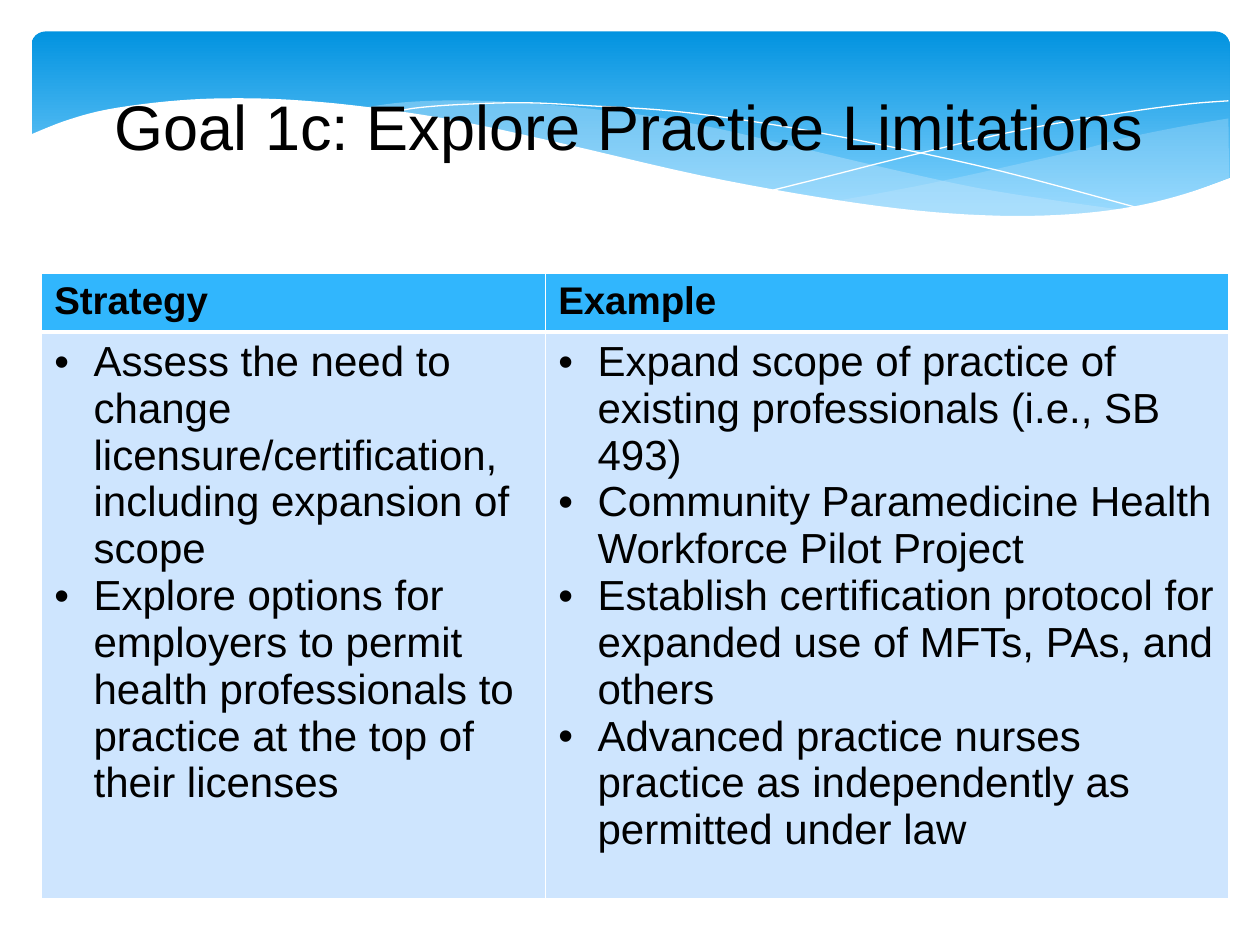
import pptx
import pptx.util
import pptx.dml.color
import pptx.enum.shapes
import pptx.enum.text
import pptx.oxml.ns
import lxml.etree

Pt = pptx.util.Pt
qn = pptx.oxml.ns.qn
sub = lxml.etree.SubElement


def paint(hue):
    return pptx.dml.color.RGBColor.from_string(hue)


def smooth(knots, steps=5):
    """Points on a Catmull-Rom curve that passes through the knots."""
    ring = [knots[0], *knots, knots[-1]]
    dots = [knots[0]]
    for a, b, c, d in zip(ring, ring[1:], ring[2:], ring[3:]):
        for k in range(1, steps + 1):
            t = k / steps
            dots.append(tuple(
                0.5 * (2 * q + (r - p) * t + (2 * p - 5 * q + 4 * r - s) * t ** 2
                       + (3 * q - p - 3 * r + s) * t ** 3)
                for p, q, r, s in zip(a, b, c, d)))
    return dots


deck = pptx.Presentation()
deck.slide_width, deck.slide_height = Pt(720), Pt(540)
slide = deck.slides.add_slide(deck.slide_layouts[6])
shapes = slide.shapes

# Blue banner
band = shapes.add_shape(pptx.enum.shapes.MSO_SHAPE.ROUNDED_RECTANGLE,
                        Pt(18), Pt(18), Pt(684.7), Pt(112.3))
band.adjustments[0] = 0.071
band.shadow.inherit = False
band.line.fill.background()
band.fill.gradient()
band.fill.gradient_angle = 270
for stop, hue, place in zip(band.fill.gradient_stops, ("0293E0", "83D3FE"), (0, 0.9)):
    stop.color.rgb = paint(hue)
    stop.position = place

# Waves: curves, fill, opacity in percent (no fill means a white hairline)
waves = [
    ([[(702, 67.7), (673.2, 72.7), (641.5, 79.2), (619.9, 85), (579.6, 94.3),
       (542.2, 102.6), (508.3, 109.4), (475.9, 115.2)],
      [(475.9, 115.2), (507.6, 118.8), (545, 122.4), (578.2, 123.8),
       (607.7, 123.1), (640.1, 119.9), (668.2, 113.8), (702.4, 101.7)]],
     "C6E7FC", 29),
    ([[(643, 120.2), (602.6, 114.5), (558, 107.3), (508.3, 96.5), (452.9, 83.5),
       (409.7, 73.4), (370.1, 66.2), (334.8, 61.9), (302.4, 59), (273.6, 57.6),
       (247.7, 57.6), (225.4, 59), (205.9, 61.9)],
      [(205.9, 61.9), (232.6, 64.8), (260.6, 69.8), (290.9, 76.3), (323.3, 83.5),
       (381.6, 97.2), (432.7, 108), (478.8, 115.9), (520.6, 121),
       (556.6, 123.8), (589, 124.6), (617, 123.1), (643, 120.2)]],
     "C6E7FC", 40),
    ([[(222.5, 64.8), (236.2, 61.9), (261.4, 59.8), (299.5, 58.7), (337.7, 60.5),
       (383.8, 63.4), (437.8, 70.6), (500.4, 82.1), (572.4, 97.9), (653, 119.5)]],
     None, 100),
    ([[(441.4, 108.7), (470.2, 101.5), (518.4, 89.3), (580.3, 74.9),
       (634.3, 65.5), (675.4, 59.8), (702, 57.6)]],
     None, 100),
    ([[(703.4, 101.5), (676.8, 110.9), (647.3, 118.1), (612, 122.4), (571, 123.3),
       (522.7, 120.2), (466.6, 112.5), (399.6, 100.1), (321.8, 82.1),
       (262.8, 69.3), (210.2, 61.2), (165.6, 57), (127.4, 56.2), (95, 58),
       (61.2, 62.6), (37.4, 69), (16.6, 77.3)],
      [(16.6, 161), (703.4, 161)]],
     "FFFFFF", 100),
]
for curves, hue, alpha in waves:
    dots = [(Pt(x), Pt(y)) for curve in curves for x, y in smooth(curve)]
    pen = shapes.build_freeform(*dots[0])
    pen.add_line_segments(dots[1:], close=hue is not None)
    wave = pen.convert_to_shape()
    wave.shadow.inherit = False
    if hue is None:
        wave.fill.background()
        wave.line.color.rgb = paint("FFFFFF")
        wave.line.width = Pt(0)
        continue
    wave.line.fill.background()
    wave.fill.solid()
    wave.fill.fore_color.rgb = paint(hue)
    if alpha < 100:
        tint = wave.fill._xPr.find(".//" + qn("a:srgbClr"))
        sub(tint, qn("a:alpha"), val=str(alpha * 1000))

# Title
box = shapes.add_textbox(Pt(23.8), Pt(0), Pt(671.8), Pt(98.6))
frame = box.text_frame
frame.word_wrap = True
frame.vertical_anchor = pptx.enum.text.MSO_ANCHOR.BOTTOM
frame.margin_bottom = Pt(5.5)
para = frame.paragraphs[0]
para.alignment = pptx.enum.text.PP_ALIGN.CENTER
run = para.add_run()
run.text = "Goal 1c: Explore Practice Limitations"
run.font.name, run.font.size = "Arial", Pt(36)
run.font.color.rgb = paint("000000")

# Table of strategies and examples
rows = [
    [["Strategy"], ["Example"]],
    [["Assess the need to change licensure/certification, including expansion of scope",
      "Explore options for employers to permit health professionals to practice "
      "at the top of their licenses"],
     ["Expand scope of practice of existing professionals (i.e., SB 493)",
      "Community Paramedicine Health Workforce Pilot Project",
      "Establish certification protocol for expanded use of MFTs, PAs, and others",
      "Advanced practice nurses practice as independently as permitted under law"]],
]
grid = shapes.add_table(2, 2, Pt(23.8), Pt(156.2), Pt(678.2), Pt(333.8)).table
for col, wide in zip(grid.columns, (288, 390.2)):
    col.width = Pt(wide)
for row, high in zip(grid.rows, (31.8, 302)):
    row.height = Pt(high)

for i, row in enumerate(rows):
    head = i == 0
    for j, lines in enumerate(row):
        cell = grid.cell(i, j)
        cell.fill.solid()
        cell.fill.fore_color.rgb = paint("31B6FD" if head else "CEE5FE")

        # White borders, thick between header and body
        props = cell._tc.get_or_add_tcPr()
        for k, side in enumerate("LRTB"):
            thick = 3 if (head and side == "B") or (not head and side == "T") else 1
            edge = lxml.etree.Element(qn("a:ln" + side), w=str(Pt(thick)))
            sub(sub(edge, qn("a:solidFill")), qn("a:srgbClr"), val="FFFFFF")
            props.insert(k, edge)

        # Header text or bullets
        for n, line in enumerate(lines):
            frame = cell.text_frame
            para = frame.add_paragraph() if n else frame.paragraphs[0]
            run = para.add_run()
            run.text = line
            run.font.name, run.font.size = "Arial", Pt(22 if head else 24)
            run.font.bold = head
            run.font.color.rgb = paint("000000")
            if not head:
                style = para._p.get_or_add_pPr()
                style.set("marL", str(Pt(22.5)))
                style.set("indent", str(Pt(-22.5)))
                sub(style, qn("a:buFont"), typeface="Arial")
                sub(style, qn("a:buChar"), char="•")

deck.save("out.pptx")
